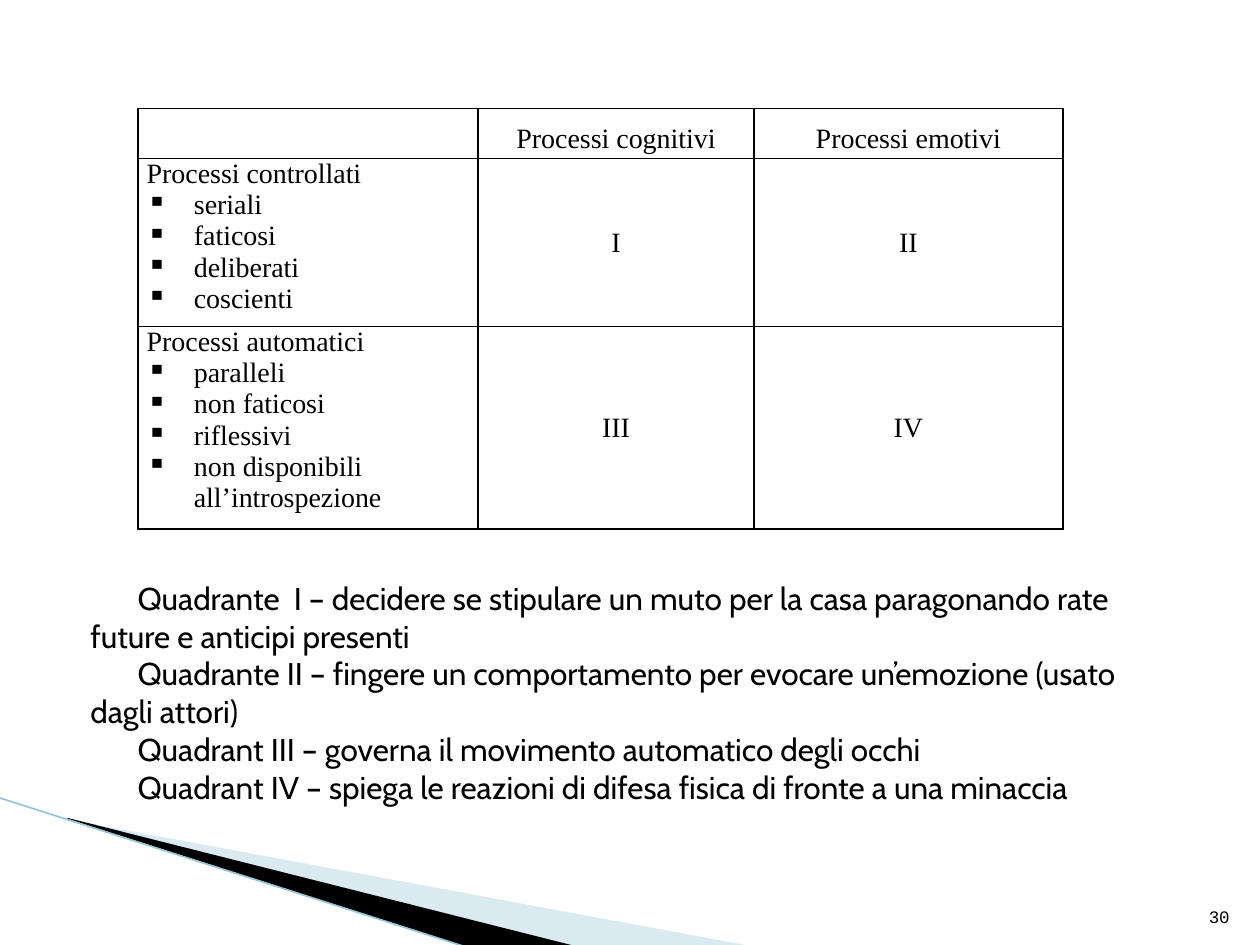
from dataclasses import dataclass

from lxml import etree
from pptx import Presentation
from pptx.dml.color import RGBColor
from pptx.enum import shapes, text
from pptx.oxml import ns
from pptx.util import Pt


@dataclass(frozen=True)
class Theme:
    """Colours, fonts and type sizes of the slide."""
    ink: str = "000000"
    pale: str = "A0CBDC"
    edge: str = "97C5D8"
    body_font: str = "Cabin"
    table_font: str = "Times New Roman"
    number_font: str = "Courier New"
    body: int = 18
    table: int = 16
    number: int = 10


THEME = Theme()
ROWS = [
    ["", "Processi cognitivi", "Processi emotivi"],
    ["Processi controllati\nseriali\nfaticosi\ndeliberati\ncoscienti", "I", "II"],
    ["Processi automatici\nparalleli\nnon faticosi\nriflessivi\n"
     "non disponibili all’introspezione", "III", "IV"],
]
QUADRANTS = [
    "Quadrante  I – decidere se stipulare un muto per la casa paragonando rate "
    "future e anticipi presenti",
    "Quadrante II – fingere un comportamento per evocare un’emozione (usato dagli attori)",
    "Quadrant III – governa il movimento automatico degli occhi",
    "Quadrant IV – spiega le reazioni di difesa fisica di fronte a una minaccia",
]


def sub(parent, tag, **attrs):
    """Append a DrawingML child with the given attributes."""
    el = etree.SubElement(parent, ns.qn(f"a:{tag}"))
    for name, value in attrs.items():
        el.set(name, str(value))
    return el


def style(tf, font, size):
    """Format every run of a text frame."""
    for p in tf.paragraphs:
        for r in p.runs:
            r.font.name, r.font.size = font, Pt(size)
            r.font.color.rgb = RGBColor.from_string(THEME.ink)


def indent(p, left, first, bullet=None):
    """Set a paragraph's indents and optional bullet with its tab stop."""
    pPr = p._p.get_or_add_pPr()
    pPr.set("marL", str(Pt(left)))
    pPr.set("indent", str(Pt(first)))
    if bullet:
        sub(pPr, "buChar", char=bullet)
        sub(sub(pPr, "tabLst"), "tab", pos=Pt(54), algn="l")


def add_wedge(s, points, color, alpha=None):
    """Draw a filled polygon without outline."""
    start, *rest = [(Pt(x), Pt(y)) for x, y in points]
    builder = s.shapes.build_freeform(*start)
    builder.add_line_segments(rest)
    sp = builder.convert_to_shape()
    sp.shadow.inherit = False
    sp.line.fill.background()
    sp.fill.solid()
    sp.fill.fore_color.rgb = RGBColor.from_string(color)
    if alpha:
        clr = sp._element.spPr.find(f".//{ns.qn('a:srgbClr')}")
        sub(clr, "alpha", val=alpha * 1000)


def add_edge(s, x1, y1, x2, y2):
    """Draw the thin line along the wedges."""
    cxn = s.shapes.add_connector(
        shapes.MSO_CONNECTOR.STRAIGHT, Pt(x1), Pt(y1), Pt(x2), Pt(y2))
    cxn.line.color.rgb = RGBColor.from_string(THEME.edge)
    cxn.line.width = Pt(0.95)
    sub(cxn._element.spPr, "effectLst")


def add_text(s, box, content, font, size, anchor):
    """Add a wrapping text box and return its text frame."""
    tf = s.shapes.add_textbox(*map(Pt, box)).text_frame
    tf.word_wrap = True
    tf.vertical_anchor = anchor
    tf.text = content
    style(tf, font, size)
    return tf


def format_cell(cell, row, col):
    """Set a cell's borders, margins, alignment and type."""
    tcPr = cell._tc.get_or_add_tcPr()
    for side in ("lnL", "lnR", "lnT", "lnB"):
        ln = sub(tcPr, side, w=Pt(1))
        sub(sub(ln, "solidFill"), "srgbClr", val=THEME.ink)
    cell.fill.background()
    cell.margin_left = cell.margin_right = Pt(5)
    cell.margin_top = cell.margin_bottom = 0
    tf = cell.text_frame
    if col:
        tf.paragraphs[0].alignment = text.PP_ALIGN.CENTER
        if row:
            cell.vertical_anchor = text.MSO_ANCHOR.MIDDLE
        else:
            tf.paragraphs[0].line_spacing = 1.5
    for p in tf.paragraphs[1:]:
        indent(p, 27, -27, "▪")
    style(tf, THEME.table_font, THEME.table)


def add_matrix(s, left, top, widths, heights):
    """Add the table of processes."""
    table = s.shapes.add_table(
        len(heights), len(widths), Pt(left), Pt(top),
        Pt(sum(widths)), Pt(sum(heights))).table
    table.first_row = table.horz_banding = False
    for column, width in zip(table.columns, widths):
        column.width = Pt(width)
    for i, height in enumerate(heights):
        table.rows[i].height = Pt(height)
        for j, content in enumerate(ROWS[i]):
            cell = table.cell(i, j)
            cell.text_frame.text = content
            format_cell(cell, i, j)


def main():
    """Build and save the slide."""
    prs = Presentation()
    prs.slide_width, prs.slide_height = Pt(720), Pt(540)
    s = prs.slides.add_slide(prs.slide_layouts[6])
    add_wedge(s, [(39.6, 468.5), (428.4, 540.5), (328.3, 540.5), (39.6, 468)],
              THEME.pale, 40)
    add_wedge(s, [(38.2, 467.3), (329, 540.7), (267.8, 541.4), (38.9, 468)], THEME.ink)
    add_edge(s, -0.7, 455.8, 267.1, 541.4)
    tf = add_text(s, (44.6, 326.2, 635.8, 159.8), "\n".join(QUADRANTS),
                  THEME.body_font, THEME.body, text.MSO_ANCHOR.TOP)
    tf.margin_top = Pt(4.5)
    for p in tf.paragraphs:
        indent(p, 0, 27)
    tf = add_text(s, (681, 504.7, 28.8, 28.8), "30",
                  THEME.number_font, THEME.number, text.MSO_ANCHOR.BOTTOM)
    tf.paragraphs[0].alignment = text.PP_ALIGN.RIGHT
    add_matrix(s, 78.8, 61.9, (194.4, 157.7, 176.4), (28.5, 96, 115.5))
    prs.save("out.pptx")


if __name__ == "__main__":
    main()
